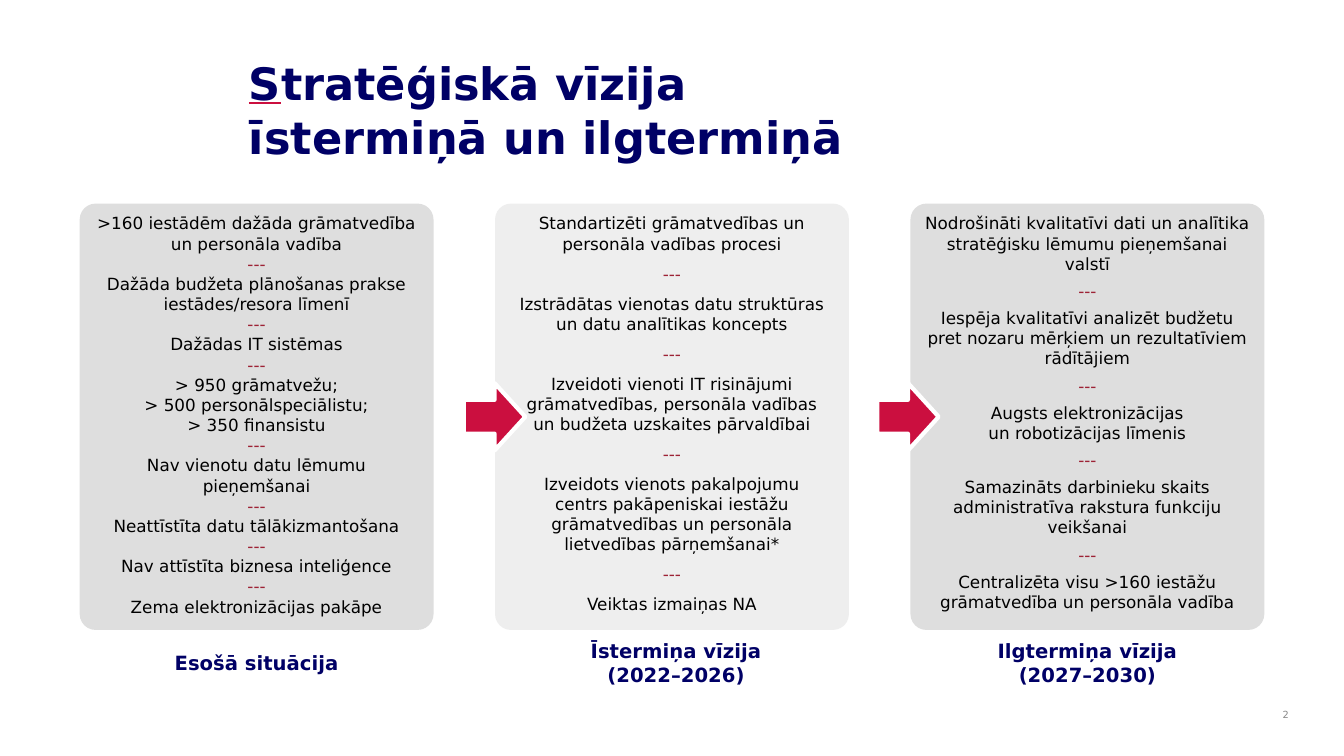
from lxml import etree
from pptx import Presentation
from pptx.dml.color import RGBColor
from pptx.enum.shapes import MSO_SHAPE as SHAPE
from pptx.enum.text import MSO_ANCHOR as ANCHOR, PP_ALIGN as ALIGN
from pptx.oxml.ns import qn
from pptx.util import Inches, Pt

COLORS = {
    "navy": "000066",
    "red": "CB0F3F",
    "separator": "9D2235",
    "card": "DEDEDE",
    "black": "000000",
    "white": "FFFFFF",
    "gray": "898989",
}
FONT = "DejaVu Sans"
SEPARATOR = "---"
CARD_LEFT, CARD_STEP, CARD_WIDTH = 0.79, 4.12, 3.51

COLUMNS = [
    {
        "caption": "Esošā situācija",
        "caption_left": 0.79,
        "space": 0,
        "alpha": None,
        "items": [
            ">160 iestādēm dažāda grāmatvedība un personāla vadība",
            "Dažāda budžeta plānošanas prakse iestādes/resora līmenī",
            "Dažādas IT sistēmas",
            "> 950 grāmatvežu;\n> 500 personālspeciālistu;\n> 350 finansistu",
            "Nav vienotu datu lēmumu pieņemšanai",
            "Neattīstīta datu tālākizmantošana",
            "Nav attīstīta biznesa inteliģence",
            "Zema elektronizācijas pakāpe",
        ],
    },
    {
        "caption": "Īstermiņa vīzija\n(2022–2026)",
        "caption_left": 4.95,
        "space": 7,
        "alpha": 50,
        "items": [
            "Standartizēti grāmatvedības un personāla vadības procesi",
            "Izstrādātas vienotas datu struktūras un datu analītikas koncepts",
            "Izveidoti vienoti IT risinājumi grāmatvedības, personāla vadības\v"
            "un budžeta uzskaites pārvaldībai",
            "Izveidots vienots pakalpojumu\vcentrs pakāpeniskai iestāžu "
            "grāmatvedības un personāla lietvedības pārņemšanai*",
            "Veiktas izmaiņas NA",
        ],
    },
    {
        "caption": "Ilgtermiņa vīzija\n(2027–2030)",
        "caption_left": 9.03,
        "space": 5,
        "alpha": None,
        "items": [
            "Nodrošināti kvalitatīvi dati un analītika stratēģisku lēmumu "
            "pieņemšanai valstī",
            "Iespēja kvalitatīvi analizēt budžetu pret nozaru mērķiem un "
            "rezultatīviem rādītājiem",
            "Augsts elektronizācijas\vun robotizācijas līmenis",
            "Samazināts darbinieku skaits administratīva rakstura funkciju veikšanai",
            "Centralizēta visu >160 iestāžu grāmatvedība un personāla vadība",
        ],
    },
]


def rgb(name):
    return RGBColor.from_string(COLORS[name])


class Deck:
    def __init__(self):
        self.prs = Presentation()
        self.prs.slide_width = Inches(13.33)
        self.prs.slide_height = Inches(7.5)
        self.s = self.prs.slides.add_slide(self.prs.slide_layouts[6])

    def style(self, p, size, color, bold=False, align=ALIGN.CENTER):
        p.alignment = align
        p.font.name = FONT
        p.font.size = Pt(size)
        p.font.bold = bold
        p.font.color.rgb = rgb(color)

    def shape(self, kind, box, fill=None):
        sp = self.s.shapes.add_shape(kind, *map(Inches, box))
        sp.shadow.inherit = False
        sp.line.fill.background()
        if fill:
            sp.fill.solid()
            sp.fill.fore_color.rgb = rgb(fill)
        else:
            sp.fill.background()
        return sp

    def textbox(self, box, anchor):
        tf = self.s.shapes.add_textbox(*map(Inches, box)).text_frame
        tf.word_wrap = True
        tf.vertical_anchor = anchor
        return tf

    def title(self, box, lines):
        p = self.textbox(box, ANCHOR.TOP).paragraphs[0]
        self.style(p, 31.9, "navy", True, ALIGN.LEFT)
        first = p.add_run()
        first.text = lines[0][0]
        first.font.underline = True
        line_fill = etree.SubElement(first.font._element, qn("a:uFill"))
        solid = etree.SubElement(line_fill, qn("a:solidFill"))
        etree.SubElement(solid, qn("a:srgbClr"), val=COLORS["red"])
        p.add_run().text = lines[0][1:]
        p.add_line_break()
        p.add_run().text = lines[1]

    def card(self, left, items, space, alpha):
        sp = self.shape(SHAPE.ROUNDED_RECTANGLE, (left, 2.02, CARD_WIDTH, 4.23), "card")
        sp.adjustments[0] = 0.045
        if alpha:
            clr = sp.fill._xPr.find(qn("a:solidFill"))[0]
            etree.SubElement(clr, qn("a:alpha"), val=str(alpha * 1000))
        tf = sp.text_frame
        tf.vertical_anchor = ANCHOR.TOP
        tf.text = f"\n{SEPARATOR}\n".join(items)
        for p in tf.paragraphs:
            self.style(p, 12, "separator" if p.text == SEPARATOR else "black")
            p.space_after = Pt(space)
        tf.paragraphs[-1].space_after = Pt(0)

    def caption(self, left, text):
        sp = self.shape(SHAPE.ROUNDED_RECTANGLE, (left, 6.35, CARD_WIDTH, 0.45))
        sp.adjustments[0] = 0.283
        tf = sp.text_frame
        tf.vertical_anchor = ANCHOR.MIDDLE
        tf.text = text
        for p in tf.paragraphs:
            self.style(p, 14, "navy", True)

    def arrow(self, left):
        sp = self.shape(SHAPE.RIGHT_ARROW, (left, 3.8, 0.61, 0.67), "red")
        sp.line.color.rgb = rgb("white")
        sp.line.width = Pt(3)

    def page_number(self, box, text):
        p = self.textbox(box, ANCHOR.MIDDLE).paragraphs[0]
        p.text = text
        self.style(p, 7, "gray", align=ALIGN.RIGHT)


def main():
    deck = Deck()
    deck.page_number((12.44, 6.92, 0.44, 0.33), "2")
    deck.title((2.37, 0.51, 7.84, 1.06), ["Stratēģiskā vīzija", "īstermiņā un ilgtermiņā"])
    for i, column in enumerate(COLUMNS):
        deck.card(CARD_LEFT + i * CARD_STEP, column["items"], column["space"], column["alpha"])
        deck.caption(column["caption_left"], column["caption"])
    for left in (4.6, 8.7):
        deck.arrow(left)
    deck.prs.save("out.pptx")


if __name__ == "__main__":
    main()
